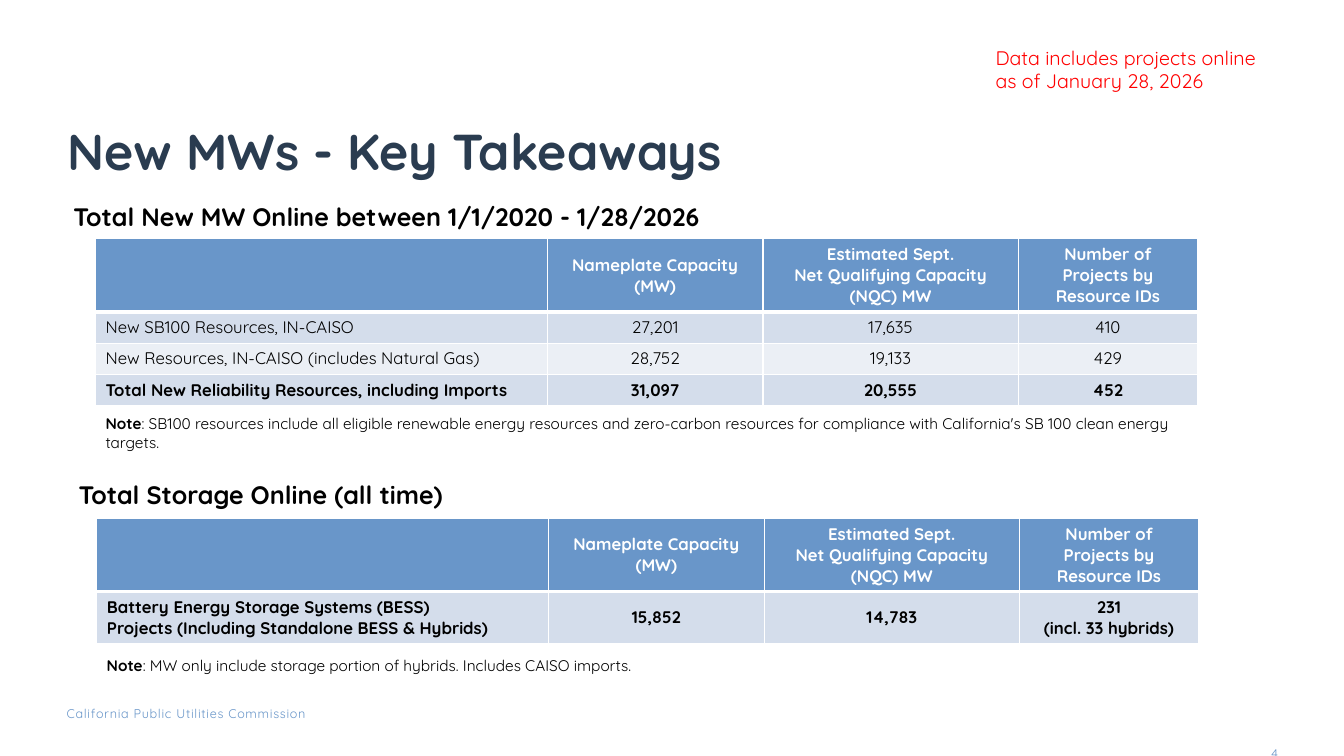
"""Build the slide on new megawatts and storage online."""
from dataclasses import dataclass

from lxml import etree
from pptx import Presentation
from pptx.dml.color import RGBColor
from pptx.enum.text import MSO_ANCHOR, PP_ALIGN
from pptx.oxml.ns import qn
from pptx.util import Cm, Pt

NAVY = RGBColor(0x2A, 0x3C, 0x50)
BLUE = RGBColor(0x69, 0x96, 0xC9)
PALE = RGBColor(0xD4, 0xDD, 0xEB)
PALER = RGBColor(0xEB, 0xEF, 0xF5)
RED = RGBColor(0xFF, 0x00, 0x00)
BLACK = RGBColor(0x00, 0x00, 0x00)
WHITE = RGBColor(0xFF, 0xFF, 0xFF)

LEFT, CENTER, RIGHT = PP_ALIGN.LEFT, PP_ALIGN.CENTER, PP_ALIGN.RIGHT
TOP, MIDDLE, BOTTOM = MSO_ANCHOR.TOP, MSO_ANCHOR.MIDDLE, MSO_ANCHOR.BOTTOM

FONT = "Quicksand"
COLUMN_WIDTHS = (11.38, 5.44, 6.43, 4.52)
HEADER_HEIGHT = 1.83
THIN, THICK = Pt(1), Pt(3)
HEADER = ("", "Nameplate Capacity\n(MW)",
          "Estimated Sept.\nNet Qualifying Capacity (NQC) MW",
          "Number of\nProjects by\nResource IDs")


@dataclass(frozen=True)
class Piece:
    text: str
    bold: bool = False


@dataclass(frozen=True)
class Caption:
    left: float
    top: float
    width: float
    height: float
    size: float
    color: RGBColor
    pieces: tuple[Piece, ...]
    align: PP_ALIGN = LEFT
    anchor: MSO_ANCHOR = TOP
    insets: tuple[float, float, float, float] = (0.25, 0.13, 0.25, 0.13)
    line_spacing: float = 1.0
    tracking: int = 0


@dataclass(frozen=True)
class Row:
    values: tuple[str, ...]
    fill: RGBColor
    bold: bool = False


@dataclass(frozen=True)
class CapacityTable:
    left: float
    top: float
    row_height: float
    rows: tuple[Row, ...]


NO_INSETS = (0, 0, 0, 0)
CAPTIONS = (
    Caption(1.68, 17.78, 8.15, 0.38, 9, BLUE,
            (Piece("California Public Utilities Commission"),),
            insets=NO_INSETS, tracking=50),
    Caption(1.7, 1.02, 30.48, 3.68, 36, NAVY,
            (Piece("New MWs - Key Takeaways", True),), anchor=BOTTOM,
            insets=(0, 0.13, 0.25, 0.13), line_spacing=0.9),
    Caption(31.14, 18.8, 1.07, 0.51, 9, BLUE, (Piece("4"),),
            align=RIGHT, insets=NO_INSETS),
    Caption(24.84, 1.02, 8.5, 2.24, 14, RED,
            (Piece("Data includes projects online\nas of January 28, 2026"),)),
    Caption(1.6, 4.95, 25, 1.02, 18, BLACK,
            (Piece("Total New MW Online between 1/1/2020 - 1/28/2026", True),)),
    Caption(1.73, 11.94, 25, 1.02, 18, BLACK,
            (Piece("Total Storage Online (all time)", True),)),
    Caption(2.44, 16.41, 21.36, 0.74, 11, BLACK,
            (Piece("Note", True),
             Piece(": MW only include storage portion of hybrids. "
                   "Includes CAISO imports."))),
    Caption(2.41, 10.31, 27.76, 1.19, 11, BLACK,
            (Piece("Note", True),
             Piece(": SB100 resources include all eligible renewable energy "
                   "resources and zero-carbon resources for compliance with "
                   "California's SB 100 clean energy targets."))),
)
TABLES = (
    CapacityTable(2.41, 6.02, 0.78, (
        Row(("New SB100 Resources, IN-CAISO", "27,201", "17,635", "410"), PALE),
        Row(("New Resources, IN-CAISO (includes Natural Gas)",
             "28,752", "19,133", "429"), PALER),
        Row(("Total New Reliability Resources, including Imports",
             "31,097", "20,555", "452"), PALE, True),
    )),
    CapacityTable(2.44, 13.06, 1.31, (
        Row(("Battery Energy Storage Systems (BESS)\n"
             "Projects (Including Standalone BESS & Hybrids)",
             "15,852", "14,783", "231\n(incl. 33 hybrids)"), PALE, True),
    )),
)


def add_piece(paragraph, piece: Piece, size: float, color: RGBColor,
              tracking: int = 0) -> None:
    for number, line in enumerate(piece.text.split("\n")):
        if number:
            paragraph.add_line_break()
        run = paragraph.add_run()
        run.text = line
        run.font.name = FONT
        run.font.size = Pt(size)
        run.font.bold = piece.bold
        run.font.color.rgb = color
        if tracking:
            run.font._element.set("spc", str(tracking))


def add_caption(slide, caption: Caption) -> None:
    box = slide.shapes.add_textbox(Cm(caption.left), Cm(caption.top),
                                   Cm(caption.width), Cm(caption.height))
    frame = box.text_frame
    frame.word_wrap = True
    frame.vertical_anchor = caption.anchor
    (frame.margin_left, frame.margin_top, frame.margin_right,
     frame.margin_bottom) = map(Cm, caption.insets)
    paragraph = frame.paragraphs[0]
    paragraph.alignment = caption.align
    paragraph.line_spacing = caption.line_spacing
    for piece in caption.pieces:
        add_piece(paragraph, piece, caption.size, caption.color, caption.tracking)


def add_borders(cell, top: int, bottom: int) -> None:
    properties = cell._tc.get_or_add_tcPr()
    widths = {"a:lnL": THIN, "a:lnR": THIN, "a:lnT": top, "a:lnB": bottom}
    for side, width in widths.items():
        line = etree.SubElement(properties, qn(side), w=str(width))
        fill = etree.SubElement(line, qn("a:solidFill"))
        etree.SubElement(fill, qn("a:srgbClr"), val=str(WHITE))


def add_capacity_table(slide, spec: CapacityTable) -> None:
    rows = (Row(HEADER, BLUE, True), *spec.rows)
    heights = [HEADER_HEIGHT] + [spec.row_height] * len(spec.rows)
    table = slide.shapes.add_table(
        len(rows), len(COLUMN_WIDTHS), Cm(spec.left), Cm(spec.top),
        Cm(sum(COLUMN_WIDTHS)), Cm(sum(heights))).table
    table.first_row = table.horz_banding = False
    for column, width in zip(table.columns, COLUMN_WIDTHS):
        column.width = Cm(width)
    for index, (row, height) in enumerate(zip(rows, heights)):
        table.rows[index].height = Cm(height)
        for position, value in enumerate(row.values):
            cell = table.cell(index, position)
            add_borders(cell, THICK if index == 1 else THIN,
                        THICK if index == 0 else THIN)
            cell.fill.solid()
            cell.fill.fore_color.rgb = row.fill
            cell.vertical_anchor = MIDDLE
            paragraph = cell.text_frame.paragraphs[0]
            paragraph.alignment = CENTER if position else LEFT
            if value:
                add_piece(paragraph, Piece(value, row.bold), 12,
                          BLACK if index else WHITE)


def main() -> None:
    deck = Presentation()
    deck.slide_width, deck.slide_height = Cm(33.87), Cm(19.05)
    slide = deck.slides.add_slide(deck.slide_layouts[6])
    for capacity in TABLES:
        add_capacity_table(slide, capacity)
    for caption in CAPTIONS:
        add_caption(slide, caption)
    deck.save("out.pptx")


if __name__ == "__main__":
    main()
